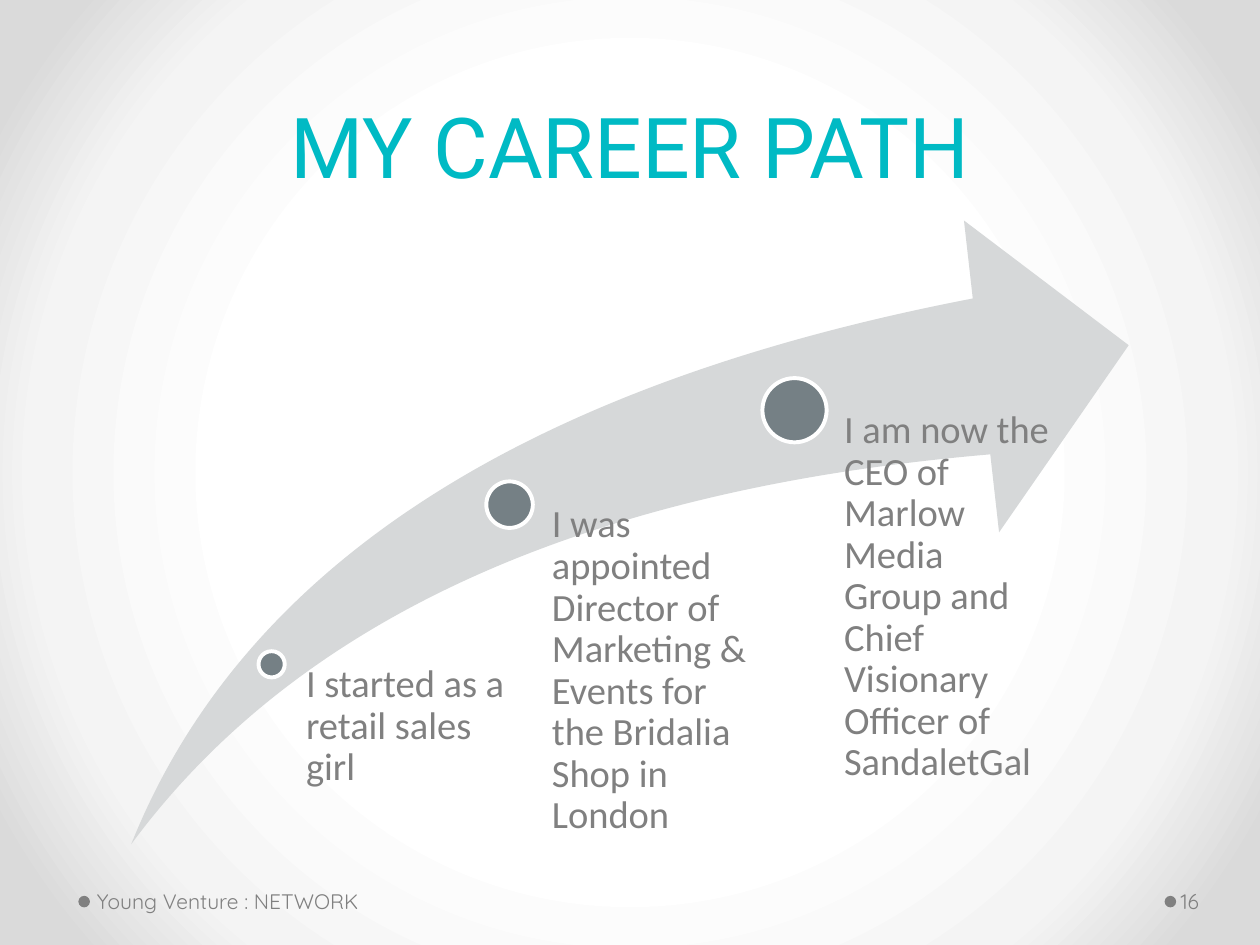
from pptx import Presentation
from pptx.dml.color import RGBColor
from pptx.enum.shapes import MSO_SHAPE
from pptx.enum.text import MSO_ANCHOR, PP_ALIGN
from pptx.oxml import parse_xml
from pptx.oxml.ns import nsdecls, qn
from pptx.util import Pt

TEAL = RGBColor(0x00, 0xBA, 0xC4)
GREY = RGBColor(0x80, 0x80, 0x80)
PALE = RGBColor(0xD6, 0xD8, 0xD9)
SLATE = RGBColor(0x75, 0x80, 0x85)
WHITE = RGBColor(0xFF, 0xFF, 0xFF)
GLOW = [(50, WHITE), (76, RGBColor(0xF4, 0xF4, 0xF4)), (92, RGBColor(0xDA, 0xDA, 0xDA))]

# Centre x, centre y, dot size, label left, label width, label inset, wording
STEPS = [
    (155.2, 379.6, 15, 167, 133.2, 7.9, "I started as a retail sales girl"),
    (291.2, 288.4, 26.6, 301, 136.8, 14.4,
     "I was appointed Director of Marketing & Events for the Bridalia Shop in London"),
    (454, 234.4, 36.7, 463, 136.8, 19.4,
     "I am now the CEO of Marlow Media Group and Chief Visionary Officer of SandaletGal"),
]


def apply(target, values):
    for name, value in values.items():
        setattr(target, name, value)


def write(frame, text, font, para_format=None, **frame_format):
    apply(frame, {"word_wrap": True, **frame_format})
    para = frame.paragraphs[0]
    apply(para, para_format or {})
    span = para.add_run()
    span.text = text
    apply(span.font, {"name": font[0], "size": Pt(font[1])})
    span.font.color.rgb = font[2]


def add_text(page, box, text, font, insets, para_format=None, **frame_format):
    frame = page.shapes.add_textbox(*map(Pt, box)).text_frame
    sides = ("margin_left", "margin_top", "margin_right", "margin_bottom")
    margins = dict(zip(sides, map(Pt, insets)))
    write(frame, text, font, para_format, **margins, **frame_format)


def add_plain_shape(page, kind, box, fill, outline=None):
    shape = page.shapes.add_shape(kind, *map(Pt, box))
    shape.shadow.inherit = False
    shape.fill.solid()
    shape.fill.fore_color.rgb = fill
    if outline:
        shape.line.color.rgb = outline
        shape.line.width = Pt(2.25)
    else:
        shape.line.fill.background()
    return shape


def paint_background(page):
    page.background.fill.gradient()
    linear = page.element.find(".//" + qn("a:gradFill"))
    stops = "".join(
        f'<a:gs pos="{pos * 1000}"><a:srgbClr val="{color}"/></a:gs>' for pos, color in GLOW)
    radial = parse_xml(
        f'<a:gradFill {nsdecls("a")} rotWithShape="1"><a:gsLst>{stops}</a:gsLst>'
        '<a:path path="circle"><a:fillToRect l="50000" t="50000" r="50000" b="50000"/>'
        '</a:path></a:gradFill>')
    linear.getparent().replace(linear, radial)


def add_title(page, box):
    title = page.shapes.title
    apply(title, dict(zip(("left", "top", "width", "height"), map(Pt, box))))
    write(title.text_frame, "MY CAREER PATH", ("Roboto", 48, TEAL),
          {"alignment": PP_ALIGN.CENTER, "line_spacing": Pt(58)},
          vertical_anchor=MSO_ANCHOR.BOTTOM)


def add_career_path(page, box):
    left, top, width, height = box
    arrow = add_plain_shape(page, MSO_SHAPE.SWOOSH_ARROW, box, PALE)
    arrow.adjustments[0] = arrow.adjustments[1] = 0.25
    # Each label starts level with its dot and ends at the foot of the arrow
    for x, y, size, label_left, label_width, inset, text in STEPS:
        dot = (x - size / 2, y - size / 2, size, size)
        add_plain_shape(page, MSO_SHAPE.OVAL, dot, SLATE, WHITE)
        add_text(page, (label_left, y, label_width, top + height - y), text,
                 ("Calibri", 22, GREY), (inset, 0, 0, 0), {"line_spacing": 0.9})


def add_footer_item(page, box, text, insets):
    left, top, width, height = box
    dot_size = 6.6
    dot = (left - 7, top + 11.5, dot_size, dot_size)
    add_plain_shape(page, MSO_SHAPE.OVAL, dot, GREY)
    add_text(page, box, text, ("Quicksand", 12, GREY), insets,
             vertical_anchor=MSO_ANCHOR.MIDDLE)


def main():
    deck = Presentation()
    apply(deck, {"slide_width": Pt(720), "slide_height": Pt(540)})
    page = deck.slides.add_slide(deck.slide_layouts[5])
    paint_background(page)
    add_title(page, (36, 10.8, 648, 104.4))
    add_career_path(page, (75, 126, 570, 356.4))
    add_footer_item(page, (51.8, 500.4, 224, 28.8), "Young Venture : NETWORK",
                    (3.6, 3.6, 7.2, 3.6))
    add_footer_item(page, (672.5, 500.4, 44, 28.8), "16", (2.2, 3.6, 3.6, 3.6))
    deck.save("out.pptx")


if __name__ == "__main__":
    main()
